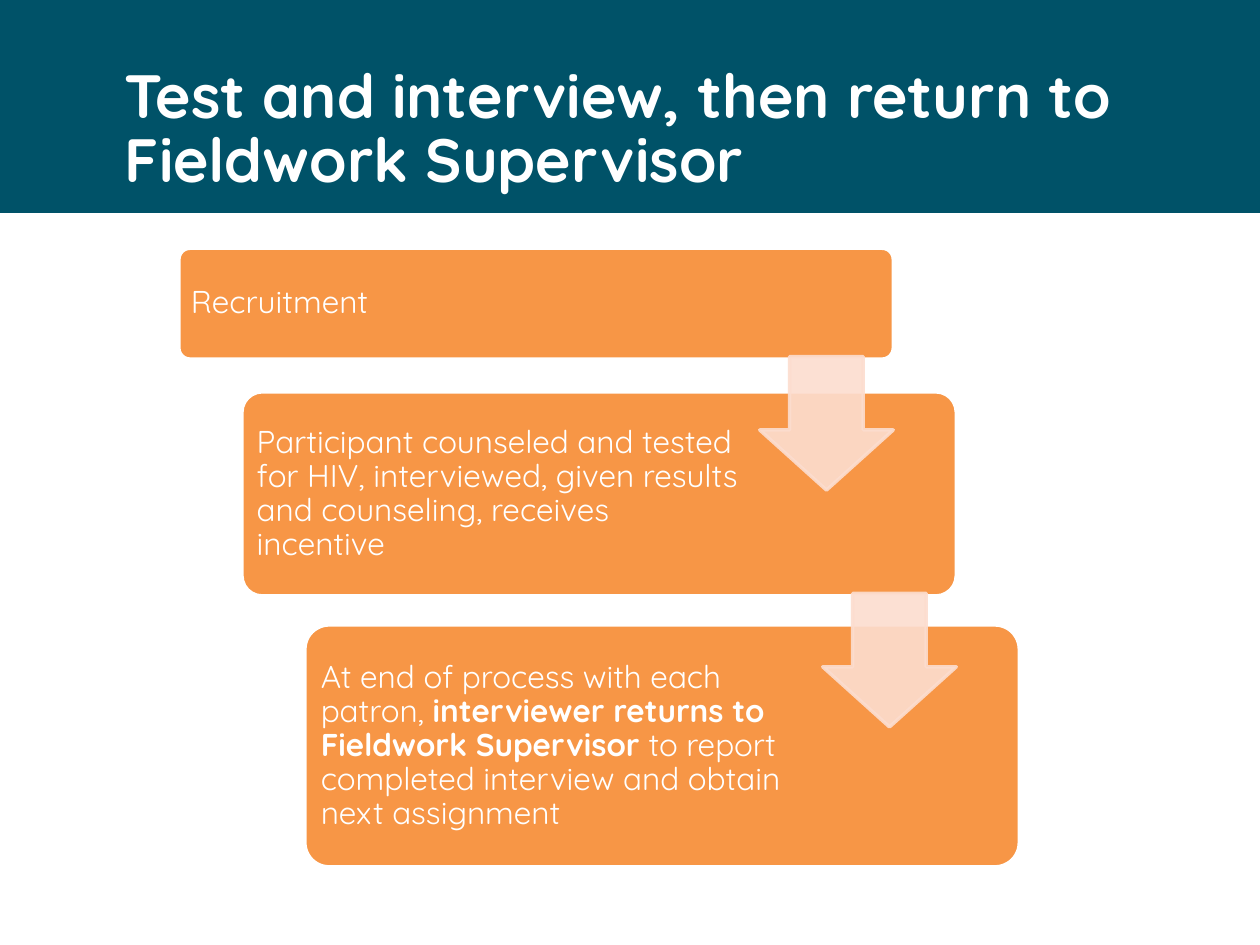
from dataclasses import dataclass

from lxml import etree
from pptx import Presentation
from pptx import util as u
from pptx.dml.color import RGBColor
from pptx.enum import shapes, text
from pptx.oxml import ns

WIDE, HIGH = 10, 7.5
TEAL = RGBColor(0x00, 0x52, 0x68)
ORANGE = RGBColor(0xF7, 0x96, 0x46)
PEACH = RGBColor(0xFC, 0xDD, 0xCF)
WHITE = RGBColor(0xFF, 0xFF, 0xFF)

# Staircase rule: each step moves right by one column
LEFT, COL, WIDTH = 1.42, 0.05 * WIDE, 5.67
ARROW, LAP = 1.06, 0.02
BODY = {"name": "Quicksand", "size": u.Pt(18)}
HEAD = {"name": "Quicksand", "size": u.Pt(34.9), "bold": True}


@dataclass
class Step:
    top: float
    high: float
    runs: list[tuple[str, bool]]


STEPS = [
    Step(1.97, 0.88, [("Recruitment", False)]),
    Step(3.11, 1.62, [("Participant counseled and tested for HIV, interviewed, "
                       "given results and counseling, receives incentive", False)]),
    Step(4.96, 1.92, [("At end of process with each patron,", False),
                      (" interviewer returns to Fieldwork Supervisor ", True),
                      ("to report completed interview and obtain next assignment", False)]),
]


def style(item, form: dict) -> None:
    for key, val in form.items():
        setattr(item, key, val)


def write(para, words: str, form: dict) -> None:
    run = para.add_run()
    run.text = words
    style(run.font, form)
    run.font.color.rgb = WHITE


def draw(page, kind, box: tuple, fill: RGBColor, line: RGBColor | None = None):
    shape = page.shapes.add_shape(kind, *(u.Inches(n) for n in box))
    shape.shadow.inherit = False
    shape.fill.solid()
    shape.fill.fore_color.rgb = fill
    if line is None:
        shape.line.fill.background()
    else:
        shape.line.color.rgb = line
        shape.line.width = u.Pt(2)
    return shape


def add_step(page, col: int, step: Step) -> None:
    box = (LEFT + col * COL, step.top, WIDTH, step.high)
    card = draw(page, shapes.MSO_SHAPE.ROUNDED_RECTANGLE, box, ORANGE, WHITE)
    card.adjustments[0] = 0.1
    frame = card.text_frame
    inset = u.Inches(0.07)
    # The wide right margin leaves room for the arrow
    style(frame, {"word_wrap": True, "vertical_anchor": text.MSO_ANCHOR.MIDDLE,
                  "margin_left": inset, "margin_top": inset,
                  "margin_bottom": inset, "margin_right": u.Inches(1.65)})
    para = frame.paragraphs[0]
    style(para, {"alignment": text.PP_ALIGN.LEFT, "line_spacing": 0.9})
    for words, bold in step.runs:
        write(para, words, {**BODY, "bold": bold})


def add_arrow(page, col: int, step: Step) -> None:
    box = (LEFT + col * COL + WIDTH - ARROW, step.top + step.high - LAP, ARROW, ARROW)
    arrow = draw(page, shapes.MSO_SHAPE.DOWN_ARROW, box, PEACH, PEACH)
    arrow.adjustments[0], arrow.adjustments[1] = 0.55, 0.45
    # Fill and line are 90% opaque
    for color in arrow.element.spPr.iter(ns.qn("a:srgbClr")):
        etree.SubElement(color, ns.qn("a:alpha"), val="90000")


def main() -> None:
    deck = Presentation()
    deck.slide_width, deck.slide_height = u.Inches(WIDE), u.Inches(HIGH)
    page = deck.slides.add_slide(deck.slide_layouts[5])

    # Title on its band
    title = page.shapes.title
    band = draw(page, shapes.MSO_SHAPE.RECTANGLE, (0, 0, WIDE, 1.69), TEAL)
    title.element.addprevious(band.element)
    style(title, {"left": u.Inches(0.89), "top": u.Inches(0.47),
                  "width": u.Inches(8.62), "height": u.Inches(1.1)})
    style(title.text_frame, {"word_wrap": True, "auto_size": text.MSO_AUTO_SIZE.NONE,
                             "vertical_anchor": text.MSO_ANCHOR.TOP})
    para = title.text_frame.paragraphs[0]
    style(para, {"alignment": text.PP_ALIGN.LEFT, "line_spacing": u.Pt(37)})
    write(para, "Test and interview, then return to Fieldwork Supervisor", HEAD)

    # Steps, then the arrows that link them
    for col, step in enumerate(STEPS):
        add_step(page, col, step)
    for col, step in enumerate(STEPS[:-1]):
        add_arrow(page, col, step)

    deck.save("out.pptx")


if __name__ == "__main__":
    main()
